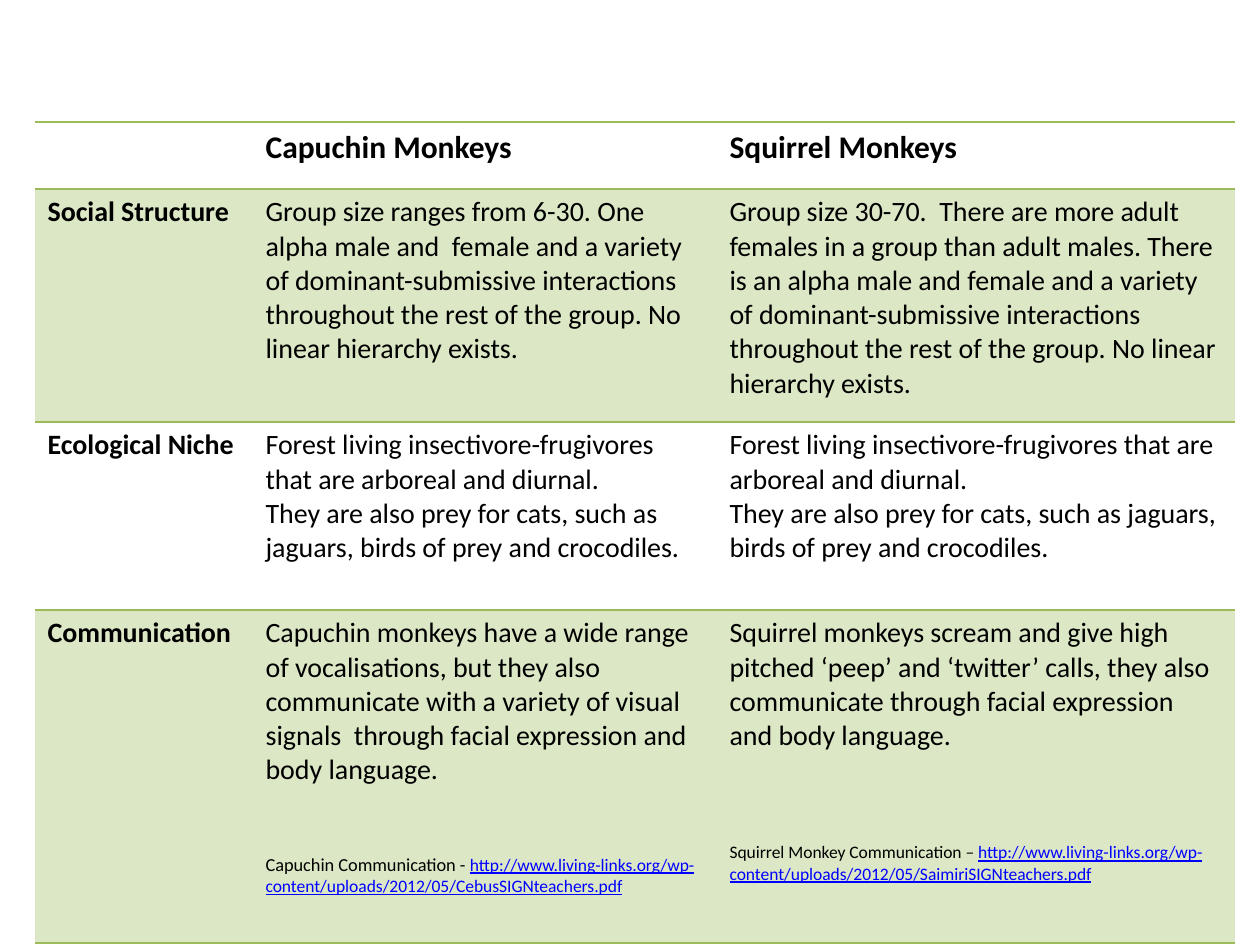
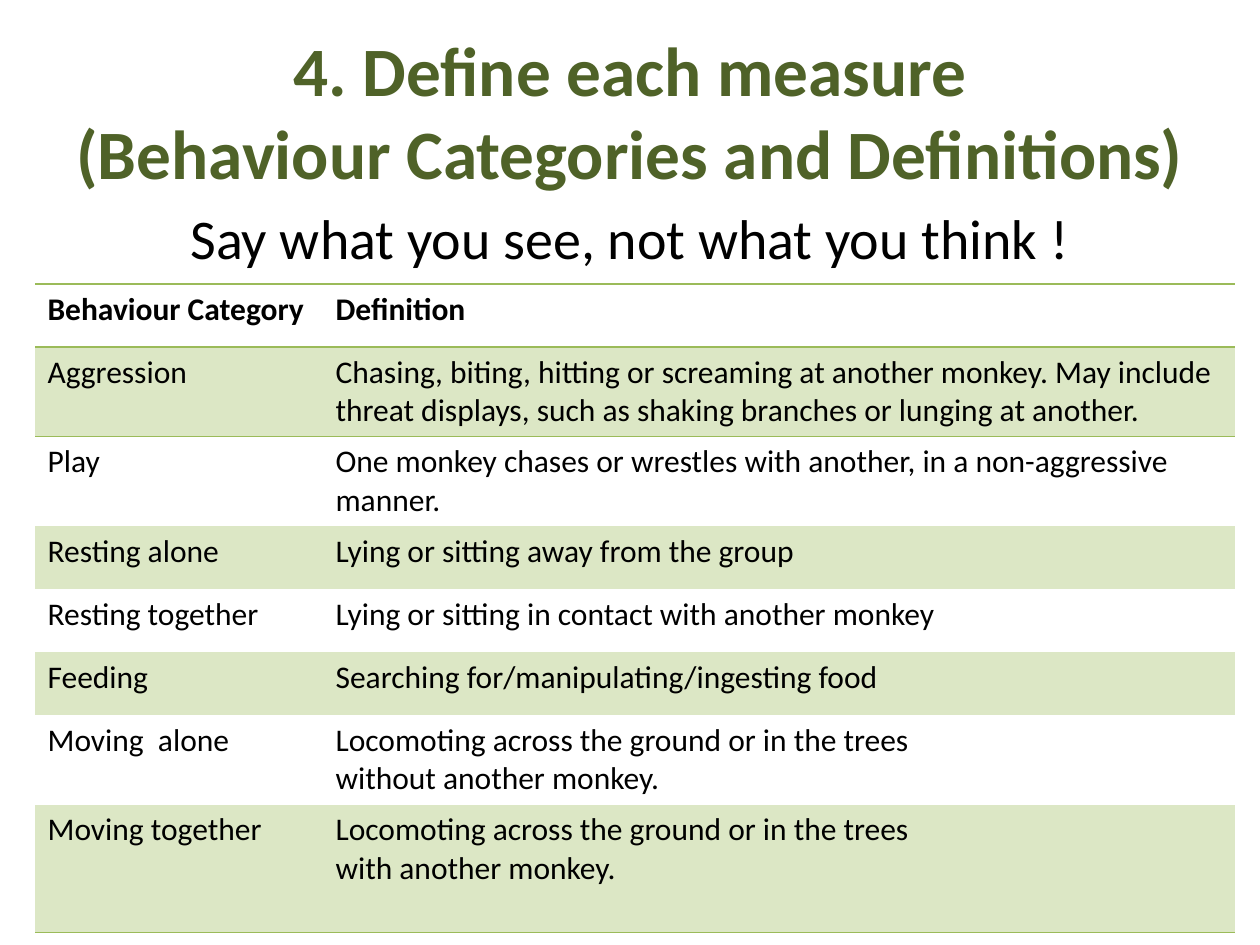
"""Build two slides on monkey behaviour: a species table and a definitions table."""
from pptx import Presentation
from pptx import util as u
from pptx.dml.color import RGBColor
from pptx.enum import text
from pptx.oxml import parse_xml
from pptx.oxml.ns import nsdecls

INK = RGBColor(0x00, 0x00, 0x00)
MOSS = RGBColor(0x4F, 0x62, 0x28)
LEAF = RGBColor(0x9B, 0xBB, 0x59)
PALE = RGBColor(0xDC, 0xE7, 0xC5)
BLUE = RGBColor(0x00, 0x00, 0xFF)
FACE = "Calibri"
PLAIN = "{2D5ABB26-0587-4C30-8999-92F81FD0307C}"
LEFT = 35

NICHE = ("Forest living insectivore-frugivores that are arboreal and diurnal.\n"
         "They are also prey for cats, such as jaguars, birds of prey and crocodiles.")
SPECIES = [
    ("", "Capuchin Monkeys", "Squirrel Monkeys"),
    ("Social Structure",
     "Group size ranges from 6-30. One alpha male and  female and a variety of "
     "dominant-submissive interactions throughout the rest of the group. "
     "No linear hierarchy exists.",
     "Group size 30-70.  There are more adult females in a group than adult males. "
     "There is an alpha male and female and a variety of dominant-submissive "
     "interactions throughout the rest of the group. No linear hierarchy exists."),
    ("Ecological Niche", NICHE, NICHE),
    ("Communication",
     "Capuchin monkeys have a wide range of vocalisations, but they also\n"
     "communicate with a variety of visual signals  through facial expression "
     "and body language.",
     "Squirrel monkeys scream and give high pitched ‘peep’ and ‘twitter’ calls, "
     "they also communicate through facial expression and body language."),
]
SOURCES = [
    (1, 38, 10.5, "Capuchin Communication - ",
     "http://www.living-links.org/wp-content/uploads/2012/05/CebusSIGNteachers.pdf"),
    (2, 51, 10, "Squirrel Monkey Communication – ",
     "http://www.living-links.org/wp-content/uploads/2012/05/SaimiriSIGNteachers.pdf"),
]

TITLE = "4. Define each measure\v(Behaviour Categories and Definitions)"
MOTTO = "Say what you see, not what you think !"
MOVING = "Locomoting across the ground or in the trees\n"
TERMS = [
    ("Behaviour Category", "Definition"),
    ("Aggression", "Chasing, biting, hitting or screaming at another monkey. May "
     "include threat displays, such as shaking branches or lunging at another."),
    ("Play", "One monkey chases or wrestles with another, in a non-aggressive manner."),
    ("Resting alone", "Lying or sitting away from the group"),
    ("Resting together", "Lying or sitting in contact with another monkey"),
    ("Feeding", "Searching for/manipulating/ingesting food"),
    ("Moving  alone", MOVING + "without another monkey."),
    ("Moving together", MOVING + "with another monkey."),
]


def px(n):
    """Turn px into EMU."""
    return u.Emu(round(n * 914400 / 126))


def style(font, size, color=INK, **more):
    """Set font values from a dict."""
    font.color.rgb = color
    for key, val in {"name": FACE, "size": u.Pt(size), **more}.items():
        setattr(font, key, val)


def rule(cell, side):
    """Draw a green line on one side of a cell."""
    cell._tc.get_or_add_tcPr().insert(0, parse_xml(
        f'<a:ln{side} {nsdecls("a")} w="12700"><a:solidFill>'
        f'<a:srgbClr val="{LEAF}"/></a:solidFill></a:ln{side}>'))


def grid(slide, top, cols, highs, rows, size, ruled, bold=()):
    """Add a banded table with lines under the ruled rows."""
    frame = slide.shapes.add_table(len(rows), len(cols), px(LEFT), px(top),
                                   px(sum(cols)), px(sum(highs)))
    table = frame.table
    table.first_row = table.horz_banding = False
    table._tbl.tblPr[0].text = PLAIN
    for col, wide in zip(table.columns, cols):
        col.width = px(wide)
    for r, (row, high) in enumerate(zip(rows, highs)):
        table.rows[r].height = px(high)
        for c, words in enumerate(row):
            cell = table.cell(r, c)
            if r % 2:
                cell.fill.solid()
                cell.fill.fore_color.rgb = PALE
            else:
                cell.fill.background()
            if r in ruled:
                rule(cell, "B")
            if r == 0 or r - 1 in ruled:
                rule(cell, "T")
            cell.text_frame.text = words
            for para in cell.text_frame.paragraphs:
                style(para.font, size if r else 18, bold=r == 0 or c in bold)
                for run in para.runs:
                    style(run.font, size if r else 18, bold=r == 0 or c in bold)
    return table


def compare(deck):
    """Build the species slide."""
    slide = deck.slides.add_slide(deck.slide_layouts[6])
    table = grid(slide, 122, (218, 464, 518), (67, 233, 188, 333), SPECIES, 16,
                 range(4), bold=(0,))
    for col, gap, size, label, link in SOURCES:
        para = table.cell(3, col).text_frame.add_paragraph()
        para.space_before = u.Pt(gap)
        for words, look in ((label, {"size": size}),
                            (link, {"size": 10, "color": BLUE, "underline": True})):
            run = para.add_run()
            run.text = words
            style(run.font, **look)


def place(shape, box, words, size, color, **more):
    """Put centred text into a box."""
    shape.left, shape.top, shape.width, shape.height = map(px, box)
    frame = shape.text_frame
    frame.text = words
    frame.word_wrap = True
    frame.auto_size = text.MSO_AUTO_SIZE.NONE
    para = frame.paragraphs[0]
    para.alignment = text.PP_ALIGN.CENTER
    for run in para.runs:
        style(run.font, size, color, **more)
    return frame


def define(deck):
    """Build the definitions slide."""
    slide = deck.slides.add_slide(deck.slide_layouts[5])
    head = place(slide.shapes.title, (0, 67, 1260, 158), TITLE, 39.6, MOSS, bold=True)
    head.vertical_anchor = text.MSO_ANCHOR.MIDDLE
    head.margin_top, head.margin_bottom = 0, px(72)
    motto = slide.shapes.add_textbox(0, 0, 0, 0)
    place(motto, (63, 195, 1134, 100), MOTTO, 32, INK).margin_top = px(9)
    one, two = 63, 89
    grid(slide, 284, (288, 912), (one, two, two, one, one, one, two, 128), TERMS, 18,
         (0, len(TERMS) - 1))


def main():
    """Make and save the deck."""
    deck = Presentation()
    deck.slide_width, deck.slide_height = px(1260), px(945)
    compare(deck)
    define(deck)
    deck.save("out.pptx")


if __name__ == "__main__":
    main()
